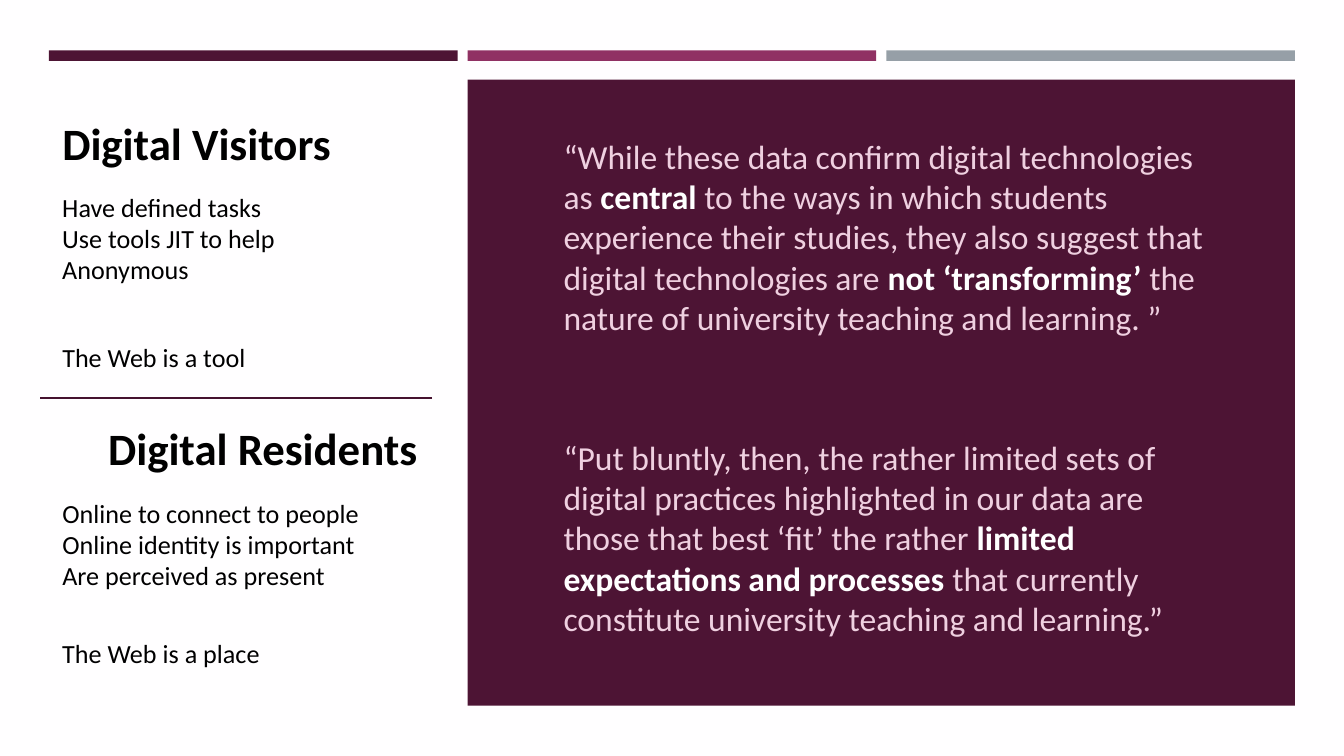
from dataclasses import dataclass

from pptx import Presentation
from pptx.dml.color import RGBColor
from pptx.enum.shapes import MSO_CONNECTOR, MSO_SHAPE
from pptx.enum.text import MSO_AUTO_SIZE, PP_ALIGN
from pptx.oxml.ns import qn
from pptx.util import Inches, Pt
from lxml.etree import SubElement

PLUM = RGBColor(0x4D, 0x14, 0x34)
BERRY = RGBColor(0x90, 0x31, 0x63)
STEEL = RGBColor(0x96, 0x9F, 0xA7)
RULE = RGBColor(0x45, 0x12, 0x2F)
PAPER = RGBColor(0xFF, 0xFE, 0xFF)
PINK = RGBColor(0xEF, 0xD0, 0xE0)
WHITE = RGBColor(0xFF, 0xFF, 0xFF)
BLACK = RGBColor(0, 0, 0)

WIDE = Inches(10)
HIGH = WIDE * 9 // 16
EDGE, COL, GAP = 3.65, 30.4, 0.75
STEP = COL + GAP


@dataclass
class Box:
    left: float
    top: float
    width: float
    height: float

    def place(self) -> tuple[int, int, int, int]:
        return (across(self.left), down(self.top),
                across(self.width), down(self.height))


@dataclass
class Group:
    title: str
    head: Box
    align: PP_ALIGN
    traits: list[str]
    body: Box
    motto: str
    foot: Box


def across(share: float) -> int:
    return round(WIDE * share / 100)


def down(share: float) -> int:
    return round(HIGH * share / 100)


def add_block(slide, box: Box, color: RGBColor) -> None:
    block = slide.shapes.add_shape(MSO_SHAPE.RECTANGLE, *box.place())
    block.shadow.inherit = False
    block.fill.solid()
    block.fill.fore_color.rgb = color
    block.line.fill.background()


def add_text(slide, box: Box, lines: list[str], *, size: int = 14,
             color: RGBColor = BLACK, strong: RGBColor = BLACK,
             bold: bool = False, align: PP_ALIGN = PP_ALIGN.LEFT,
             wrap: bool = False) -> None:
    frame = slide.shapes.add_textbox(*box.place()).text_frame
    frame.word_wrap = wrap
    frame.auto_size = MSO_AUTO_SIZE.SHAPE_TO_FIT_TEXT
    for row, line in enumerate(lines):
        para = frame.add_paragraph() if row else frame.paragraphs[0]
        para.alignment = align
        for part, words in enumerate(line.split("*")):
            stress = part % 2 == 1
            run = para.add_run()
            run.text = words
            run.font.name = "Calibri"
            run.font.size = Pt(size)
            run.font.bold = bold or stress
            run.font.color.rgb = strong if stress else color


def add_rule(slide, left: float, right: float, top: float) -> None:
    rule = slide.shapes.add_connector(
        MSO_CONNECTOR.STRAIGHT, across(right), down(top), across(left), down(top))
    rule.line.color.rgb = RULE
    rule.line.width = Pt(1)
    SubElement(rule._element.spPr, qn("a:effectLst"))


QUOTES = [
    (17.07, "“While these data confirm digital technologies as *central *to the "
     "ways in which students experience their studies, they also suggest that "
     "digital technologies are *not ‘transforming’ *the nature of university "
     "teaching and learning. ”"),
    (56.89, "“Put bluntly, then, the rather limited sets of digital practices "
     "highlighted in our data are those that best ‘fit’ the rather *limited "
     "expectations and processes *that currently constitute university teaching "
     "and learning.”"),
]

GROUPS = [
    Group("Digital Visitors", Box(EDGE, 14.4, 24.8, 8.9), PP_ALIGN.LEFT,
          ["Have defined tasks", "Use tools JIT to help", "Anonymous"],
          Box(EDGE, 24.4, 18.6, 14.4),
          "The Web is a tool", Box(EDGE, 44.25, 16.2, 6)),
    Group("Digital Residents", Box(EDGE, 54.76, 28.4, 8.9), PP_ALIGN.RIGHT,
          ["Online to connect to people", "Online identity is important",
           "Are perceived as present"],
          Box(EDGE, 64.87, 24.8, 18.5),
          "The Web is a place", Box(EDGE, 83.4, 17, 6)),
]


def main() -> None:
    deck = Presentation()
    deck.slide_width, deck.slide_height = WIDE, HIGH
    slide = deck.slides.add_slide(deck.slide_layouts[6])

    add_block(slide, Box(0, 0, 100, 100), PAPER)
    for col, color in enumerate([PLUM, BERRY, STEEL]):
        add_block(slide, Box(EDGE + col * STEP, 6.67, COL, 1.4), color)
    add_block(slide, Box(EDGE + STEP, 10.55, COL + STEP, 82.8), PLUM)

    for top, quote in QUOTES:
        add_text(slide, Box(40.95, top, 50, 28.8), [quote], size=18,
                 color=PINK, strong=WHITE, wrap=True)
    for group in GROUPS:
        add_text(slide, group.head, [group.title], size=24, bold=True,
                 align=group.align)
        add_text(slide, group.body, group.traits)
        add_text(slide, group.foot, [group.motto])
    add_rule(slide, 3, 32.15, 52.65)

    deck.save("out.pptx")


if __name__ == "__main__":
    main()
